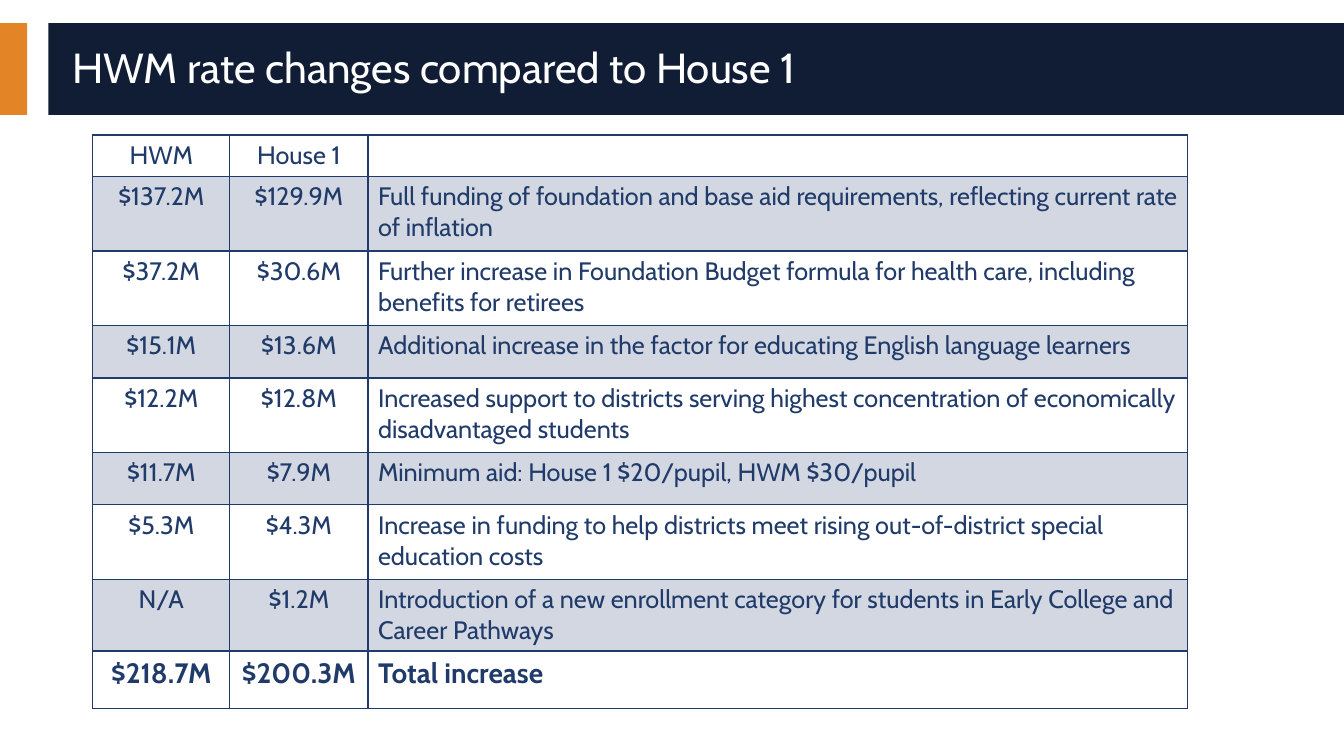
"""Build the slide comparing HWM and House 1 rate changes."""
import lxml.etree
import pptx
import pptx.dml.color
import pptx.enum.shapes
import pptx.enum.text
import pptx.oxml.ns
import pptx.util

Inches = pptx.util.Inches
RGBColor = pptx.dml.color.RGBColor
PP_ALIGN = pptx.enum.text.PP_ALIGN

ORANGE = RGBColor(0xE3, 0x85, 0x26)
NAVY = RGBColor(0x10, 0x1D, 0x35)
BLUE = RGBColor(0x20, 0x3B, 0x6A)
WHITE = RGBColor(0xFF, 0xFF, 0xFF)
FONT = "Cabin"

COLUMN_WIDTHS = (1.36, 1.37, 8.13)
ROWS = (
    (0.41, "HWM", "House 1", ""),
    (0.74, "$137.2M", "$129.9M", "Full funding of foundation and base aid requirements, "
     "reflecting current rate of inflation"),
    (0.74, "$37.2M", "$30.6M", "Further increase in Foundation Budget formula for health care, "
     "including benefits for retirees"),
    (0.52, "$15.1M", "$13.6M", "Additional increase in the factor for educating English "
     "language learners"),
    (0.74, "$12.2M", "$12.8M", "Increased support to districts serving highest concentration "
     "of economically disadvantaged students"),
    (0.52, "$11.7M", "$7.9M", "Minimum aid: House 1 $20/pupil, HWM $30/pupil"),
    (0.74, "$5.3M", "$4.3M", "Increase in funding to help districts meet rising "
     "out-of-district special education costs"),
    (0.71, "N/A", "$1.2M", "Introduction of a new enrollment category for students in "
     "Early College and Career Pathways"),
    (0.57, "$218.7M", "$200.3M", "Total increase"),
)


def style_font(font, size, color, bold=False):
    """Set the typeface, size, colour and weight of a font."""
    font.name = FONT
    font.size = pptx.util.Pt(size)
    font.color.rgb = color
    font.bold = bold


def add_bar(slide, left, width, color):
    """Add a header bar behind the title."""
    sp = slide.shapes.add_shape(pptx.enum.shapes.MSO_SHAPE.RECTANGLE,
                                Inches(left), Inches(0.23), Inches(width), Inches(0.91))
    sp.shadow.inherit = False
    sp.fill.solid()
    sp.fill.fore_color.rgb = color
    sp.line.fill.background()
    slide.shapes.title._element.addprevious(sp._element)


def set_title(slide, text):
    """Place and format the title."""
    title = slide.shapes.title
    title.left, title.top = Inches(0.62), Inches(0.32)
    title.width, title.height = Inches(12.44), Inches(0.74)
    tf = title.text_frame
    tf.text = text
    tf.vertical_anchor = pptx.enum.text.MSO_ANCHOR.MIDDLE
    p = tf.paragraphs[0]
    p.alignment = PP_ALIGN.LEFT
    p.line_spacing = 0.9
    style_font(p.font, 30, WHITE)


def add_borders(cell):
    """Draw a thin blue line on each side of a cell."""
    qn = pptx.oxml.ns.qn
    tc_pr = cell._tc.get_or_add_tcPr()
    for side in ("a:lnL", "a:lnR", "a:lnT", "a:lnB"):
        ln = lxml.etree.SubElement(tc_pr, qn(side), w=str(pptx.util.Pt(1)))
        fill = lxml.etree.SubElement(ln, qn("a:solidFill"))
        lxml.etree.SubElement(fill, qn("a:srgbClr"), val=str(BLUE))


def fill_cell(cell, shaded):
    """Give a cell a translucent blue fill, or none."""
    if not shaded:
        cell.fill.background()
        return
    qn = pptx.oxml.ns.qn
    cell.fill.solid()
    cell.fill.fore_color.rgb = BLUE
    color = cell._tc.tcPr.find(qn("a:solidFill")).find(qn("a:srgbClr"))
    lxml.etree.SubElement(color, qn("a:alpha"), val="20000")


def add_rate_table(slide):
    """Add the table of rate changes with its total row."""
    heights = [row[0] for row in ROWS]
    table = slide.shapes.add_table(
        len(ROWS), len(COLUMN_WIDTHS), Inches(0.92), Inches(1.34),
        Inches(sum(COLUMN_WIDTHS)), Inches(sum(heights))).table
    table.first_row = table.horz_banding = False
    for column, width in zip(table.columns, COLUMN_WIDTHS):
        column.width = Inches(width)
    for i, (height, *texts) in enumerate(ROWS):
        table.rows[i].height = Inches(height)
        total = i == len(ROWS) - 1
        for j, text in enumerate(texts):
            cell = table.cell(i, j)
            cell.text = text
            p = cell.text_frame.paragraphs[0]
            p.alignment = PP_ALIGN.CENTER if j < 2 else PP_ALIGN.LEFT
            style_font(p.font, 20 if total else 18, BLUE, total)
            add_borders(cell)
            fill_cell(cell, i % 2 == 1)


def main():
    """Build and save the presentation."""
    prs = pptx.Presentation()
    prs.slide_width, prs.slide_height = Inches(13.33), Inches(7.5)
    slide = prs.slides.add_slide(prs.slide_layouts[5])
    add_bar(slide, 0, 0.27, ORANGE)
    add_bar(slide, 0.48, 12.85, NAVY)
    set_title(slide, "HWM rate changes compared to House 1")
    add_rate_table(slide)
    prs.save("out.pptx")


if __name__ == "__main__":
    main()
